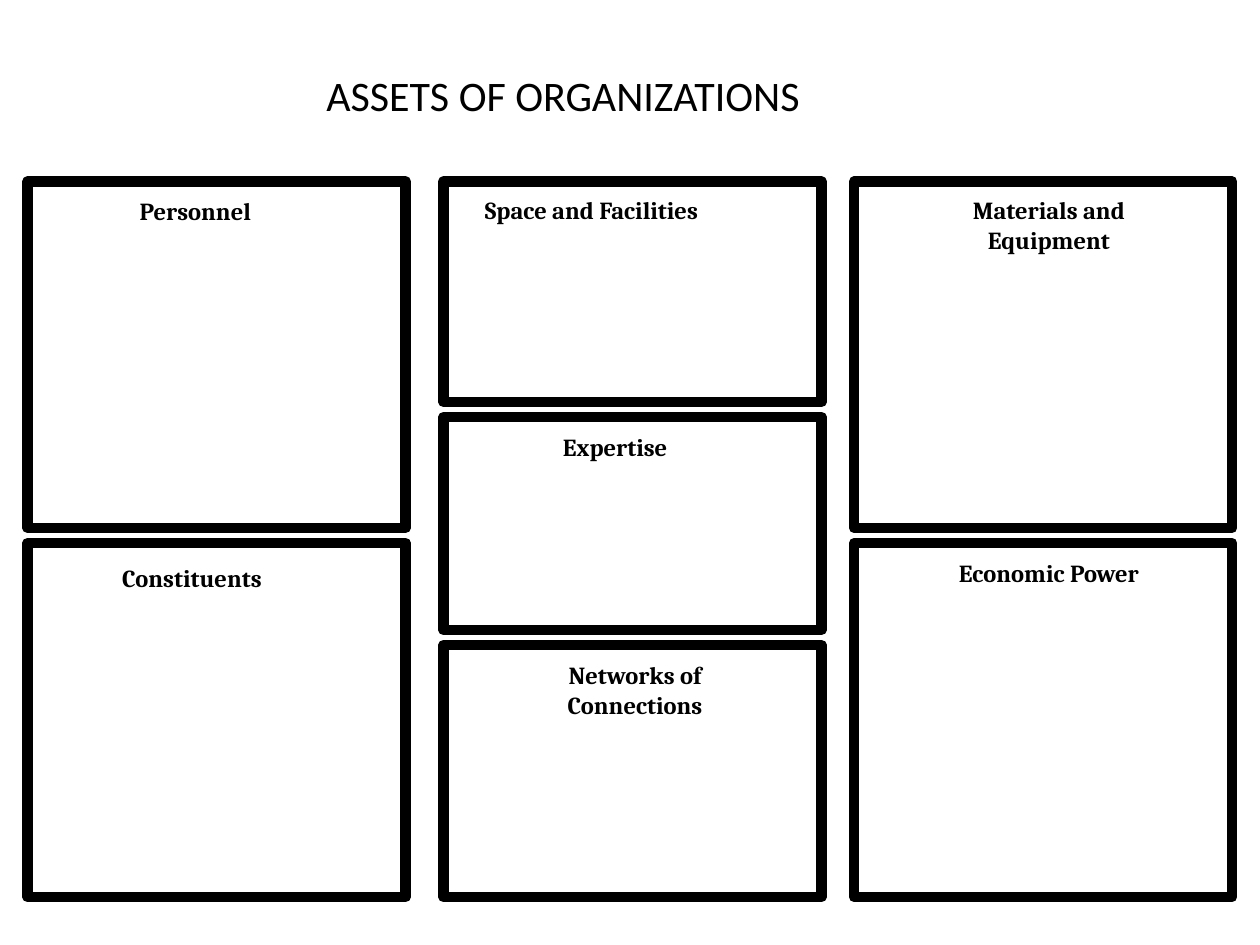
"""Builds a one-slide worksheet for mapping the assets of organizations."""
from dataclasses import dataclass

from pptx import Presentation
from pptx.dml.color import RGBColor
from pptx.enum.shapes import MSO_SHAPE
from pptx.enum.text import MSO_ANCHOR, MSO_AUTO_SIZE, PP_ALIGN
from pptx.util import Inches, Pt


@dataclass(frozen=True)
class Theme:
    ink: RGBColor = RGBColor(0, 0, 0)
    title_font: str = "Calibri"
    heading_font: str = "Cambria"
    title_size: int = 24
    heading_size: int = 14
    border: int = 6


theme = Theme()


def write(holder, text, *, font=theme.heading_font, size=theme.heading_size,
          bold=True, align=PP_ALIGN.LEFT, wrap=False):
    frame = holder.text_frame
    frame.text = text
    frame.word_wrap = wrap
    frame.auto_size = MSO_AUTO_SIZE.SHAPE_TO_FIT_TEXT
    frame.vertical_anchor = MSO_ANCHOR.TOP
    paragraph = frame.paragraphs[0]
    paragraph.alignment = align
    run_font = paragraph.runs[0].font
    run_font.name = font
    run_font.size = Pt(size)
    run_font.bold = bold
    run_font.color.rgb = theme.ink


deck = Presentation()
deck.slide_width, deck.slide_height = Inches(10), Inches(7.5)
slide = deck.slides.add_slide(deck.slide_layouts[5])

title = slide.shapes.title
title.left, title.top = Inches(2.49), Inches(0.5)
title.width, title.height = Inches(4.66), Inches(0.5)
write(title, "ASSETS OF ORGANIZATIONS", font=theme.title_font,
      size=theme.title_size, bold=False)

box_width, box_gap, grid_top = 3, 0.12, 1.44
columns = [
    (0.22, [2.75, 2.81]),
    (3.52, [1.75, 1.69, 2]),
    (6.78, [2.75, 2.81]),
]
for left, heights in columns:
    top = grid_top
    for height in heights:
        box = slide.shapes.add_shape(
            MSO_SHAPE.RECTANGLE, Inches(left), Inches(top),
            Inches(box_width), Inches(height))
        box.shadow.inherit = False
        box.fill.background()
        box.line.color.rgb = theme.ink
        box.line.width = Pt(theme.border)
        top += height + box_gap

centred = {"align": PP_ALIGN.CENTER}
centred_wrapped = {"align": PP_ALIGN.CENTER, "wrap": True}
headings = [
    ("Personnel", 1.01, 1.51, 1.52, 0.25, {}),
    ("Constituents", 0.87, 4.42, 1.85, 0.25, {}),
    ("Space and Facilities", 3.75, 1.5, 2.74, 0.25, {}),
    ("Expertise", 4.37, 3.38, 1.43, 0.25, {}),
    ("Networks of Connections", 4.15, 5.19, 1.78, 0.6, centred_wrapped),
    ("Materials and Equipment", 7.27, 1.5, 2.11, 0.43, centred_wrapped),
    ("Economic Power", 7.15, 4.38, 2.35, 0.25, centred),
]
for text, left, top, width, height, layout in headings:
    heading = slide.shapes.add_textbox(
        Inches(left), Inches(top), Inches(width), Inches(height))
    write(heading, text, **layout)

deck.save("out.pptx")
